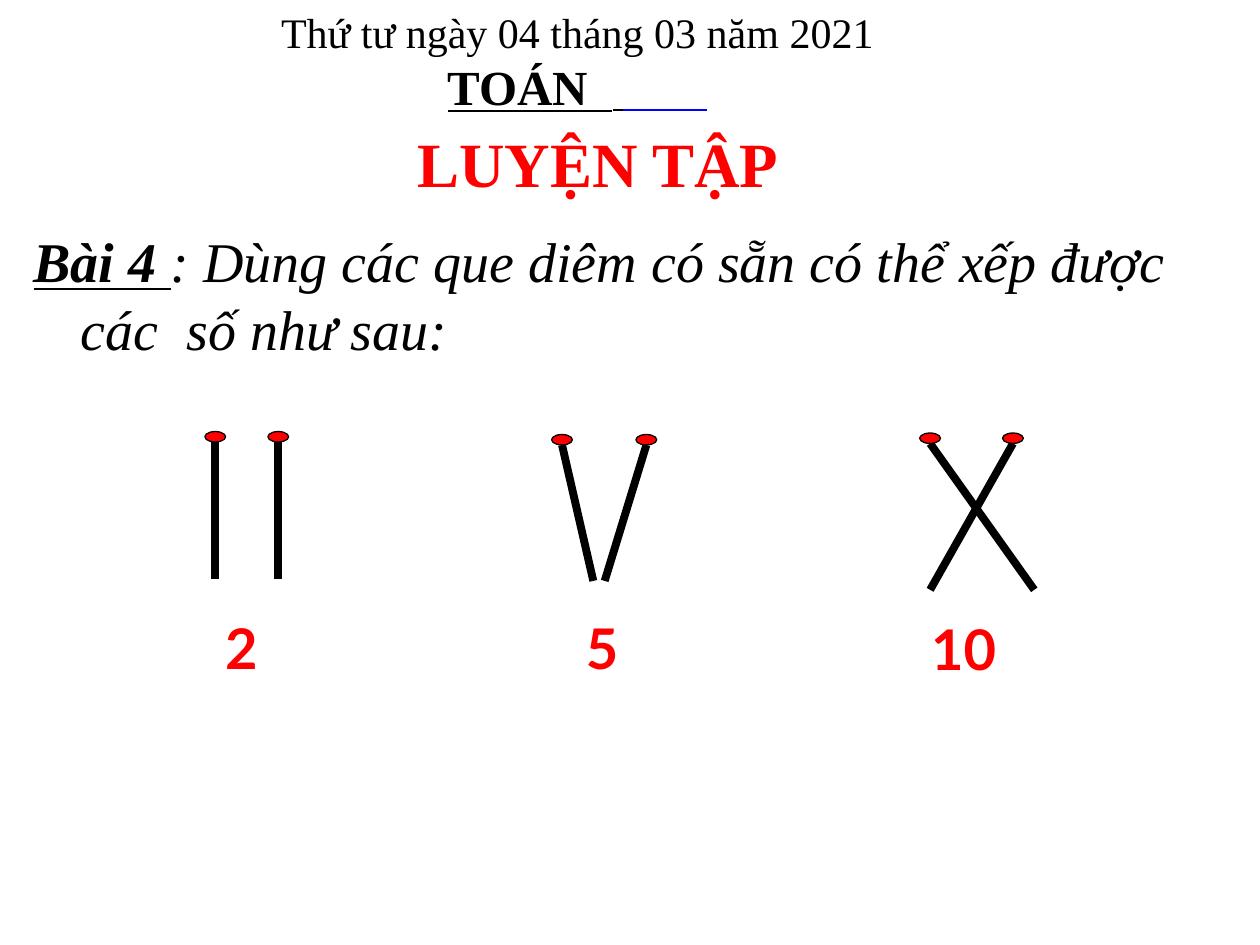
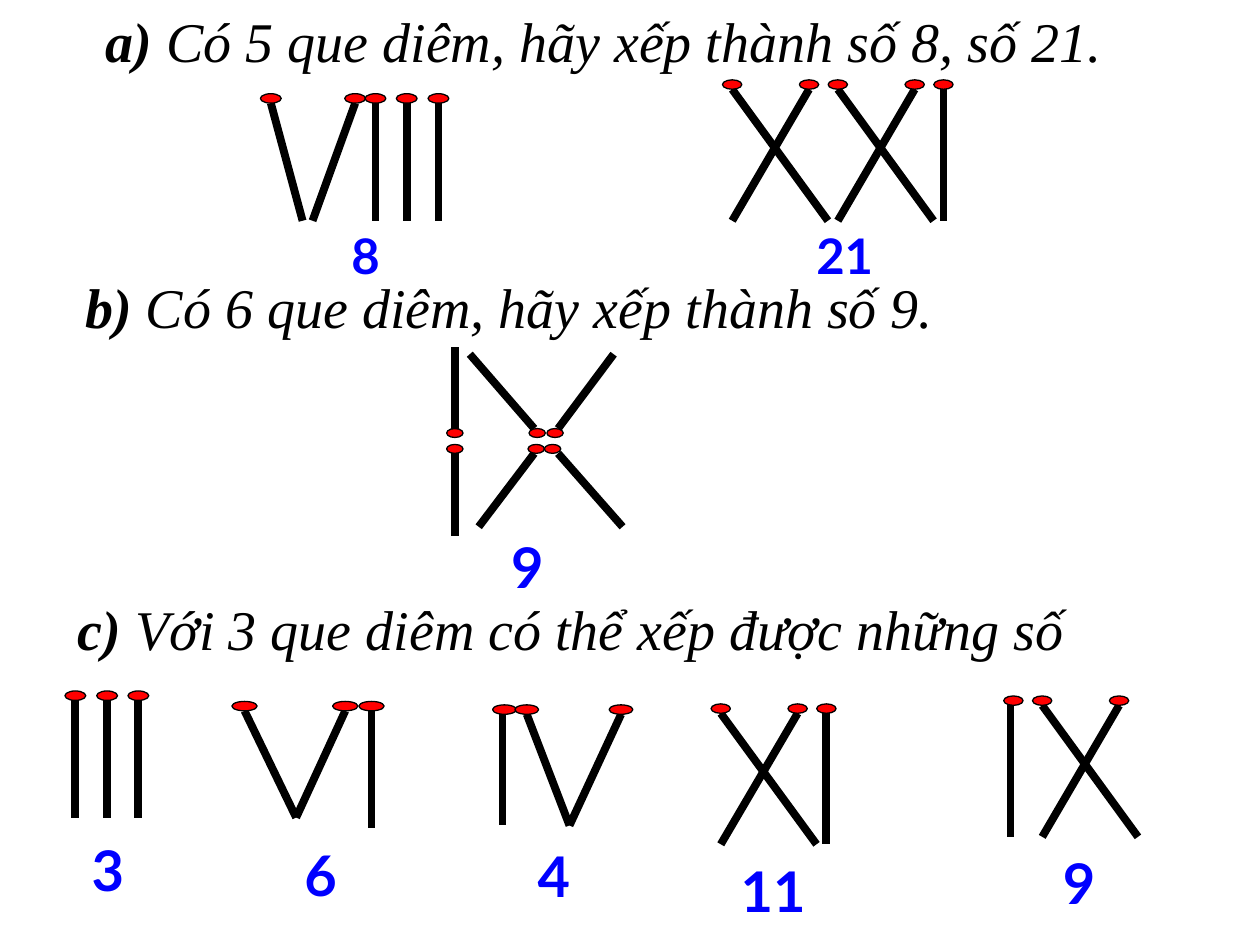
from dataclasses import dataclass

from lxml import etree
from pptx import Presentation
from pptx.dml.color import RGBColor
from pptx.enum import shapes, text
from pptx.oxml.ns import qn
from pptx.util import Cm, Pt

BLACK = RGBColor(0x00, 0x00, 0x00)
WHITE = RGBColor(0xFF, 0xFF, 0xFF)
RED = RGBColor(0xFF, 0x00, 0x00)
BLUE = RGBColor(0x00, 0x00, 0xFF)
SERIF = "Times New Roman"
SANS = "Lato"
LEFT, CENTER = text.PP_ALIGN.LEFT, text.PP_ALIGN.CENTER
TITLE_ONLY, BLANK = 5, 6


@dataclass(frozen=True)
class Span:
    words: str
    size: float
    color: RGBColor = BLACK
    bold: bool = False
    italic: bool = False
    underline: bool = False
    font: str = SERIF


@dataclass(frozen=True)
class Match:
    """A matchstick; tip and foot are horizontal places in cm."""
    tip: float
    foot: float
    head_shift: float = 0
    foot_drop: float = 0


@dataclass(frozen=True)
class Figure:
    """Matchsticks that share the height of their tips and feet."""
    tip_y: float
    foot_y: float
    matches: list[Match]
    head_width: float = 0.42
    head_height: float = 0.19


@dataclass(frozen=True)
class Answer:
    words: str
    left: float
    top: float
    width: float
    color: RGBColor = BLUE
    size: float = 32
    align: text.PP_ALIGN = CENTER


# Roman digits made of matchsticks
def upright(*places: float) -> list[Match]:
    return [Match(x, x) for x in places]


def cross(left: float, head_gap: float = 1.55, foot_gap: float = 1.93) -> list[Match]:
    return [Match(left + head_gap, left), Match(left, left + foot_gap)]


# Text
def write(paragraph, spans: list[Span], align=LEFT, before: float = 4) -> None:
    paragraph.alignment = align
    paragraph.space_before = Pt(before)
    for span in spans:
        run = paragraph.add_run()
        run.text = span.words
        font = run.font
        font.name, font.size = span.font, Pt(span.size)
        font.bold, font.italic, font.underline = span.bold, span.italic, span.underline
        font.color.rgb = span.color


def place(box, left: float, top: float, width: float, height: float):
    box.left, box.top, box.width, box.height = Cm(left), Cm(top), Cm(width), Cm(height)
    frame = box.text_frame
    frame.word_wrap = True
    frame.auto_size = text.MSO_AUTO_SIZE.NONE
    frame.vertical_anchor = text.MSO_ANCHOR.TOP
    return frame


def add_text(page, left: float, top: float, width: float, height: float):
    box = page.shapes.add_textbox(0, 0, 0, 0)
    return place(box, left, top, width, height)


def add_answer(page, answer: Answer) -> None:
    frame = add_text(page, answer.left, answer.top, answer.width, 1.6)
    span = Span(answer.words, answer.size, answer.color, bold=True, font=SANS)
    write(frame.paragraphs[0], [span], answer.align)


def add_question(page, left: float, top: float, width: float, mark: str, words: str) -> None:
    frame = add_text(page, left, top, width, 1.62)
    write(frame.paragraphs[0], [Span(mark, 32, bold=True, italic=True),
                                Span(words, 32, italic=True)])


# Matchsticks
def add_figure(page, figure: Figure) -> None:
    group = page.shapes.add_group_shape()
    points_up = figure.foot_y > figure.tip_y
    head_top = figure.tip_y - (figure.head_height if points_up else 0)
    for match in figure.matches:
        stick = group.shapes.add_connector(
            shapes.MSO_CONNECTOR.STRAIGHT, Cm(match.tip), Cm(figure.tip_y),
            Cm(match.foot), Cm(figure.foot_y + match.foot_drop))
        stick.line.color.rgb = BLACK
        stick.line.width = Pt(4.5)
        etree.SubElement(stick._element.spPr, qn("a:effectLst"))

        head_left = match.tip + match.head_shift - figure.head_width / 2
        head = group.shapes.add_shape(
            shapes.MSO_SHAPE.OVAL, Cm(head_left), Cm(head_top),
            Cm(figure.head_width), Cm(figure.head_height))
        head.shadow.inherit = False
        head.fill.solid()
        head.fill.fore_color.rgb = RED
        head.line.color.rgb = BLACK
        head.line.width = Pt(0.75)


def fill_page(page, figures: list[Figure], answers: list[Answer]) -> None:
    for figure in figures:
        add_figure(page, figure)
    for answer in answers:
        add_answer(page, answer)


# Slide 1: the exercise and its examples
def build_examples(deck) -> None:
    page = deck.slides.add_slide(deck.slide_layouts[TITLE_ONLY])
    title = place(page.shapes.title, 7.19, 2.39, 9.73, 1.8)
    write(title.paragraphs[0], [Span("LUYỆN TẬP", 36, RED, bold=True)], CENTER, 0)

    header = add_text(page, 3.91, 0, 16.31, 2.49)
    date = header.paragraphs[0]
    write(date, [Span("Thứ tư ngày 04 tháng 03 năm 2021", 24)], CENTER)
    date._p.get_or_add_pPr().set("marR", str(Cm(0.85)))
    # The blanks after the subject carry the underline
    write(header.add_paragraph(), [
        Span("TOÁN  ", 28, bold=True, underline=True),
        Span(" ", 24, bold=True, underline=True),
        Span("        ", 24, BLUE, bold=True, underline=True)], CENTER, 0)

    task = page.shapes.add_shape(shapes.MSO_SHAPE.RECTANGLE, 0, 0, 0, 0)
    task.shadow.inherit = False
    task.fill.solid()
    task.fill.fore_color.rgb = WHITE
    task.line.fill.background()
    paragraph = place(task, 0.43, 4.45, 24.56, 3).paragraphs[0]
    write(paragraph, [
        Span("Bài 4 ", 32, bold=True, italic=True, underline=True),
        Span(": Dùng các que diêm có sẵn có thể xếp được các  số như sau:", 32, italic=True)])
    properties = paragraph._p.get_or_add_pPr()
    properties.set("marL", str(Cm(0.95)))
    properties.set("indent", str(-Cm(0.95)))

    figures = [
        Figure(8.91, 11.68, upright(4.34, 5.61), head_height=0.21),
        Figure(8.97, 11.71, [Match(11.33, 11.96), Match(13.03, 12.19)], head_height=0.21),
        Figure(8.94, 11.89, cross(18.75, 1.67, 2.1), head_height=0.21),
    ]
    answers = [Answer("2", 4.29, 12.24, 1.47, RED, align=LEFT),
               Answer("5", 11.56, 12.24, 1.7, RED, align=LEFT),
               Answer("10", 18.52, 12.27, 2.11, RED, align=LEFT)]
    fill_page(page, figures, answers)


# Slide 2: three questions with their answers
def build_questions(deck) -> None:
    page = deck.slides.add_slide(deck.slide_layouts[BLANK])
    add_question(page, 1.88, 0, 22.45, "a) ", "Có 5 que diêm, hãy xếp thành số 8, số 21.")
    add_question(page, 1.47, 5.36, 20.12, "b) ", "Có 6 que diêm, hãy xếp thành số 9.")
    add_question(page, 1.32, 11.86, 22.43, "c) ", "Với 3 que diêm có thể xếp được những số")

    figures = [
        # a) VIII and XXI
        Figure(2.08, 4.45, [Match(5.46, 6.1), Match(7.16, 6.3), *upright(7.57, 8.2, 8.84)]),
        Figure(1.8, 4.45, cross(14.76) + cross(16.89) + upright(19.02), 0.39),
        # b) IX, upper and lower half
        Figure(8.64, 7.14, [Match(9.17, 9.17, 0, -0.15), Match(10.77, 9.47, 0.06),
                            Match(11.25, 12.37, -0.06)], 0.33, 0.18),
        Figure(9.14, 10.62, [Match(9.17, 9.17, 0, 0.18), Match(10.77, 9.65, 0.04),
                             Match(11.25, 12.55, -0.11)], 0.33, 0.18),
        # c) III, VI, IV, XI and IX
        Figure(14.12, 16.48, upright(1.52, 2.16, 2.79)),
        Figure(14.33, 16.48, [Match(4.93, 5.97), Match(6.96, 5.97),
                              Match(7.49, 7.49, 0, 0.21)], 0.51),
        Figure(14.4, 16.64, [Match(10.13, 10.13, 0.04), Match(10.62, 11.48),
                             Match(12.52, 11.48)], 0.48),
        Figure(14.38, 17.02, cross(14.53) + upright(16.66), 0.39),
        Figure(14.22, 16.87, cross(21.01) + [Match(20.37, 20.37, 0.06)], 0.39),
    ]
    answers = [
        Answer("8", 6.2, 4.42, 2.34, size=28),
        Answer("21", 15.44, 4.42, 3.18, size=28),
        Answer("9", 9.58, 10.62, 2.11),
        Answer("3", 1.12, 16.71, 2.11),
        Answer("6", 5.41, 16.81, 2.11),
        Answer("4", 10.11, 16.84, 2.11),
        Answer("11", 14.53, 17.15, 2.11),
        Answer("9", 20.7, 16.99, 2.11),
    ]
    fill_page(page, figures, answers)


def main() -> None:
    deck = Presentation()
    deck.slide_width, deck.slide_height = Cm(25.4), Cm(19.05)
    build_examples(deck)
    build_questions(deck)
    deck.save("out.pptx")


if __name__ == "__main__":
    main()
